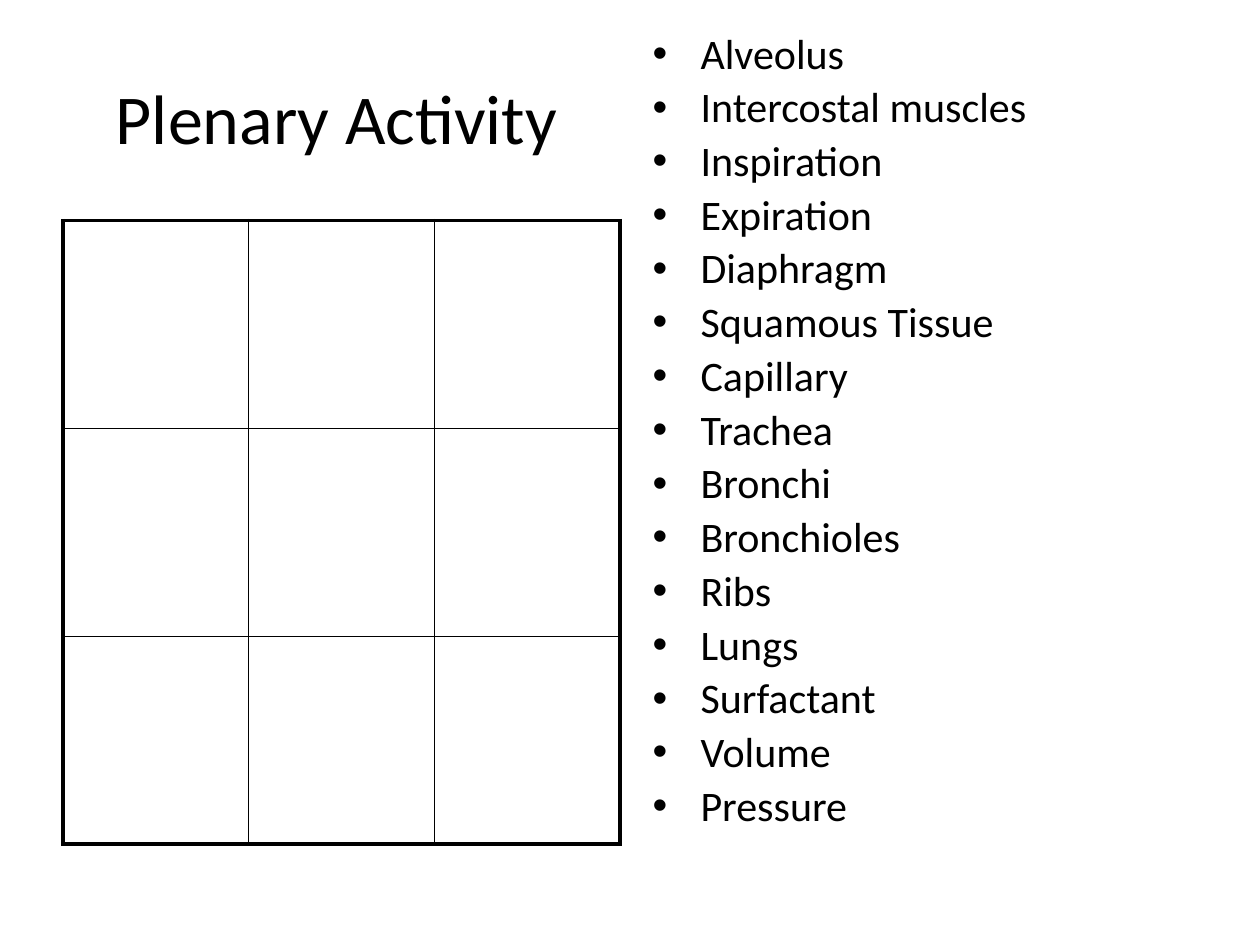
from lxml import etree
from pptx import Presentation
from pptx.dml.color import RGBColor
from pptx.enum import text
from pptx.oxml.ns import qn
from pptx.util import Pt

PX = 9144  # EMU per px, 100 px to the inch
COLORS = {"ink": "000000"}
TERMS = ["Alveolus", "Intercostal muscles", "Inspiration", "Expiration",
         "Diaphragm", "Squamous Tissue", "Capillary", "Trachea", "Bronchi",
         "Bronchioles", "Ribs", "Lungs", "Surfactant", "Volume", "Pressure"]
GRID = 3
THIN, THICK = 1, 2.25


def write(p, words, size, **fmt):
    """Add a run to a paragraph; fmt holds paragraph properties."""
    r = p.add_run()
    r.text = words
    r.font.name = "Calibri"
    r.font.size = Pt(size)
    r.font.color.rgb = RGBColor.from_string(COLORS["ink"])
    for key, value in fmt.items():
        setattr(p, key, value)


def border(cell, side, width):
    """Draw one edge of a table cell."""
    ln = etree.SubElement(cell._tc.get_or_add_tcPr(), qn(f"a:ln{side}"), w=str(Pt(width)))
    fill = etree.SubElement(ln, qn("a:solidFill"))
    etree.SubElement(fill, qn("a:srgbClr"), val=COLORS["ink"])


prs = Presentation()
prs.slide_width, prs.slide_height = 1000 * PX, 750 * PX
s = prs.slides.add_slide(prs.slide_layouts[1])
title, body = s.placeholders

# Title
title.left, title.top, title.width, title.height = [n * PX for n in (50, 30, 434, 125)]
tf = title.text_frame
tf.auto_size = text.MSO_AUTO_SIZE.NONE
tf.vertical_anchor = text.MSO_ANCHOR.MIDDLE
write(tf.paragraphs[0], "Plenary Activity", 40, alignment=text.PP_ALIGN.CENTER)

# Word list, bulleted by the template
body.left, body.top, body.width, body.height = [n * PX for n in (508, 21, 442, 693)]
tf = body.text_frame
tf.auto_size = text.MSO_AUTO_SIZE.NONE
for i, term in enumerate(TERMS):
    p = tf.add_paragraph() if i else tf.paragraphs[0]
    write(p, term, 24, line_spacing=0.9)
    pPr = p._p.get_or_add_pPr()
    pPr.set("marL", str(38 * PX))
    pPr.set("indent", str(-38 * PX))

# Empty bingo grid: thick outside, thin inside
table = s.shapes.add_table(GRID, GRID, 50 * PX, 175 * PX, 442 * PX, 495 * PX).table
table.first_row = table.horz_banding = False
last = GRID - 1
for row in range(GRID):
    for col in range(GRID):
        cell = table.cell(row, col)
        edges = {"L": col == 0, "R": col == last, "T": row == 0, "B": row == last}
        for side, outer in edges.items():
            border(cell, side, THICK if outer else THIN)
        cell.fill.background()

prs.save("out.pptx")
